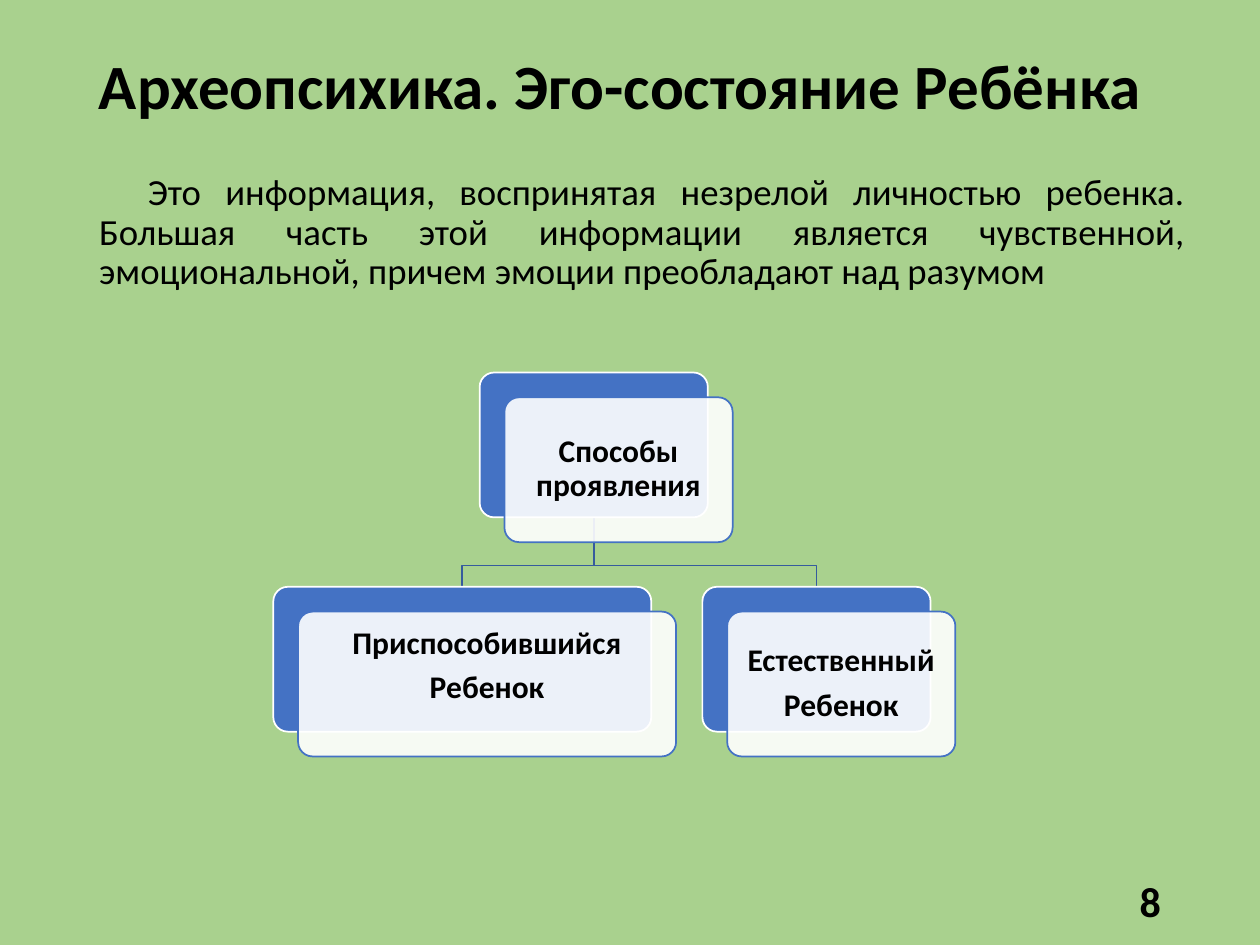
"""Build the slide about the Child ego state with its two-branch hierarchy."""
from dataclasses import dataclass

from lxml import etree
from pptx import Presentation
from pptx.dml.color import RGBColor
from pptx.enum.shapes import MSO_SHAPE
from pptx.enum.text import MSO_ANCHOR, PP_ALIGN
from pptx.oxml.ns import qn
from pptx.util import Cm, Pt

ROUNDED = MSO_SHAPE.ROUNDED_RECTANGLE
TOP, MIDDLE = MSO_ANCHOR.TOP, MSO_ANCHOR.MIDDLE
CENTER, RIGHT, JUSTIFY = PP_ALIGN.CENTER, PP_ALIGN.RIGHT, PP_ALIGN.JUSTIFY

COLORS = {
    "background": "A9D18E",
    "text": "000000",
    "card": "FFFFFF",
    "accent": "4472C4",
    "link": "365B9D",
}
FONT = "Calibri"
NODE_HEIGHT = 2.92
CARD_SHIFT = 0.5
CARD_INSET = 0.26
BUS_GAP = 0.43


@dataclass
class TextBlock:
    text: str
    left: float
    top: float
    width: float
    height: float
    size: int
    align: PP_ALIGN
    anchor: MSO_ANCHOR = MIDDLE
    bold: bool = True
    spacing: float = 0.9
    margin: float = 0
    indent: float = 0


@dataclass
class Node:
    lines: tuple[str, ...]
    left: float
    top: float
    width: float
    lift: float = 0

    @property
    def center(self) -> float:
        return self.left + self.width / 2


BLOCKS = (
    TextBlock("Археопсихика. Эго-состояние Ребёнка", 1.07, 0.43, 22.86, 2.74, 36, CENTER),
    TextBlock(
        "Это информация, воспринятая незрелой личностью ребенка. "
        "Большая часть этой информации является чувственной, "
        "эмоциональной, причем эмоции преобладают над разумом",
        1.27, 3.38, 22.86, 3.53, 21, JUSTIFY,
        anchor=TOP, bold=False, margin=0.48, indent=0.98,
    ),
    TextBlock("8", 17.93, 17.65, 5.72, 1.02, 24, RIGHT, spacing=1),
)
ROOT = Node(("Способы проявления",), 9.67, 7.51, 4.6)
CHILDREN = (
    Node(("Приспособившийся", "Ребенок"), 5.51, 11.83, 7.62, lift=0.72),
    Node(("Естественный", "Ребенок"), 14.16, 11.83, 4.6),
)


def rgb(name: str) -> RGBColor:
    return RGBColor.from_string(COLORS[name])


def add_run(p, text: str, size: int, bold: bool) -> None:
    r = p.add_run()
    r.text = text
    r.font.name = FONT
    r.font.size = Pt(size)
    r.font.bold = bold
    r.font.color.rgb = rgb("text")


def add_block(s, block: TextBlock) -> None:
    sp = s.shapes.add_textbox(
        Cm(block.left), Cm(block.top), Cm(block.width), Cm(block.height)
    )
    tf = sp.text_frame
    tf.word_wrap = True
    tf.vertical_anchor = block.anchor
    p = tf.paragraphs[0]
    p.alignment = block.align
    p.line_spacing = block.spacing
    pPr = p._p.get_or_add_pPr()
    pPr.set("marL", str(Cm(block.margin)))
    pPr.set("indent", str(Cm(block.indent)))
    add_run(p, block.text, block.size, block.bold)


def add_link(s, parent: Node, child: Node) -> None:
    bus = child.top - BUS_GAP
    start, *points = [
        (Cm(x), Cm(y))
        for x, y in (
            (parent.center, parent.top + NODE_HEIGHT),
            (parent.center, bus),
            (child.center, bus),
            (child.center, child.top),
        )
    ]
    builder = s.shapes.build_freeform(*start)
    builder.add_line_segments(points, close=False)
    sp = builder.convert_to_shape()
    sp.shadow.inherit = False
    sp.fill.background()
    sp.line.color.rgb = rgb("link")
    sp.line.width = Pt(1)


def add_panel(s, node: Node, shift: float, fill: str, line: str):
    sp = s.shapes.add_shape(
        ROUNDED, Cm(node.left + shift), Cm(node.top + shift),
        Cm(node.width), Cm(NODE_HEIGHT),
    )
    sp.adjustments[0] = 0.1
    sp.shadow.inherit = False
    sp.fill.solid()
    sp.fill.fore_color.rgb = rgb(fill)
    sp.line.color.rgb = rgb(line)
    sp.line.width = Pt(1)
    return sp


def add_node(s, node: Node) -> None:
    add_panel(s, node, 0, "accent", "card")
    sp = add_panel(s, node, CARD_SHIFT, "card", "accent")
    color = sp._element.spPr.find(qn("a:solidFill")).find(qn("a:srgbClr"))
    etree.SubElement(color, qn("a:alpha")).set("val", "90000")
    tf = sp.text_frame
    tf.word_wrap = True
    tf.vertical_anchor = MIDDLE
    tf.margin_left = tf.margin_right = tf.margin_top = Cm(CARD_INSET)
    tf.margin_bottom = Cm(CARD_INSET + node.lift)
    for i, line in enumerate(node.lines):
        p = tf.add_paragraph() if i else tf.paragraphs[0]
        p.alignment = CENTER
        p.line_spacing = 0.9
        p.space_after = Pt(6)
        add_run(p, line, 18, True)


def main() -> None:
    prs = Presentation()
    prs.slide_width, prs.slide_height = Cm(25.4), Cm(19.05)
    s = prs.slides.add_slide(prs.slide_layouts[6])
    s.background.fill.solid()
    s.background.fill.fore_color.rgb = rgb("background")
    for block in BLOCKS:
        add_block(s, block)
    for child in CHILDREN:
        add_link(s, ROOT, child)
    for node in (ROOT, *CHILDREN):
        add_node(s, node)
    prs.save("out.pptx")


if __name__ == "__main__":
    main()
